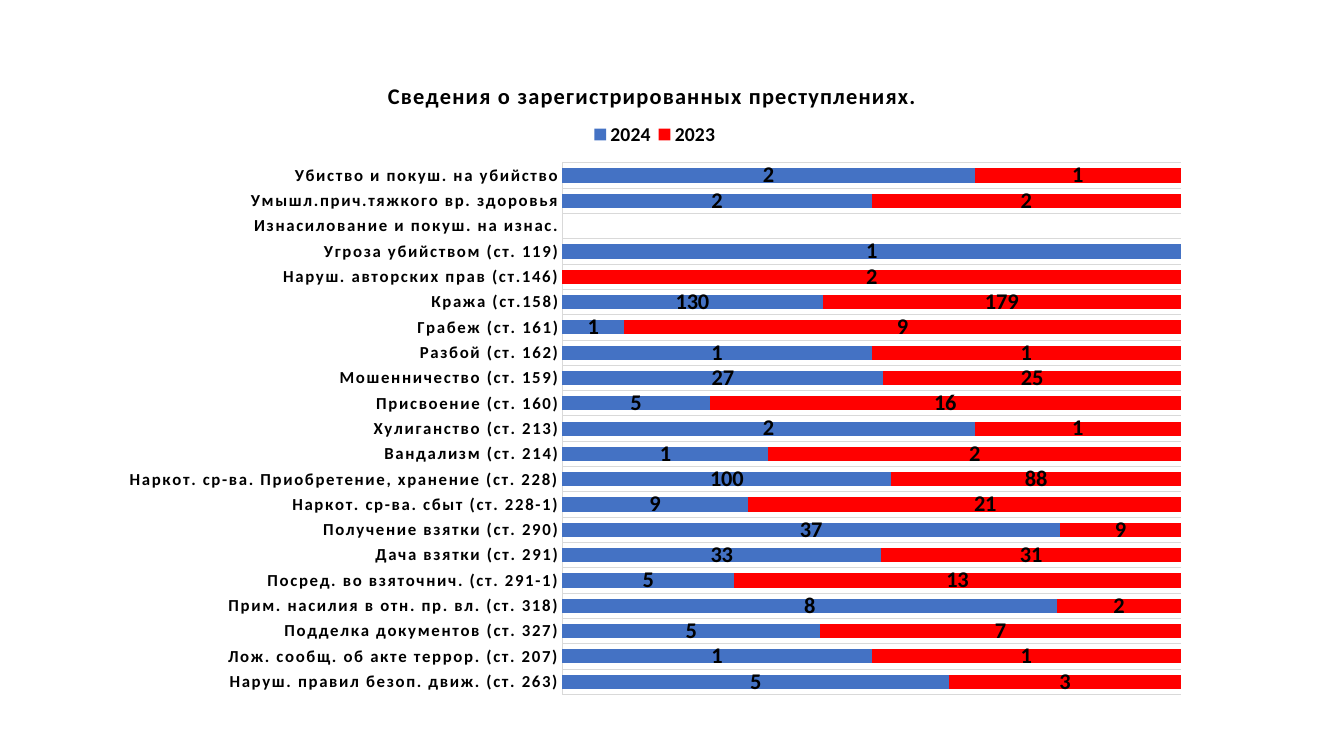
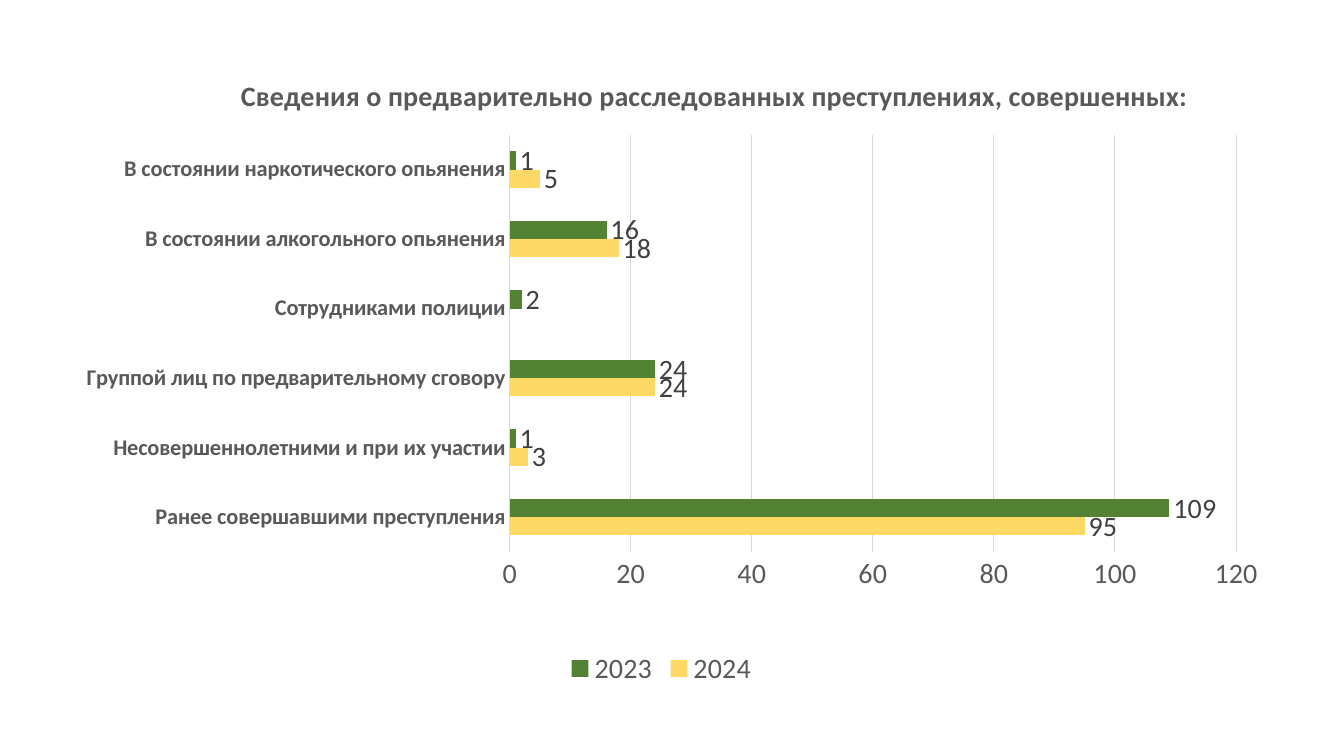
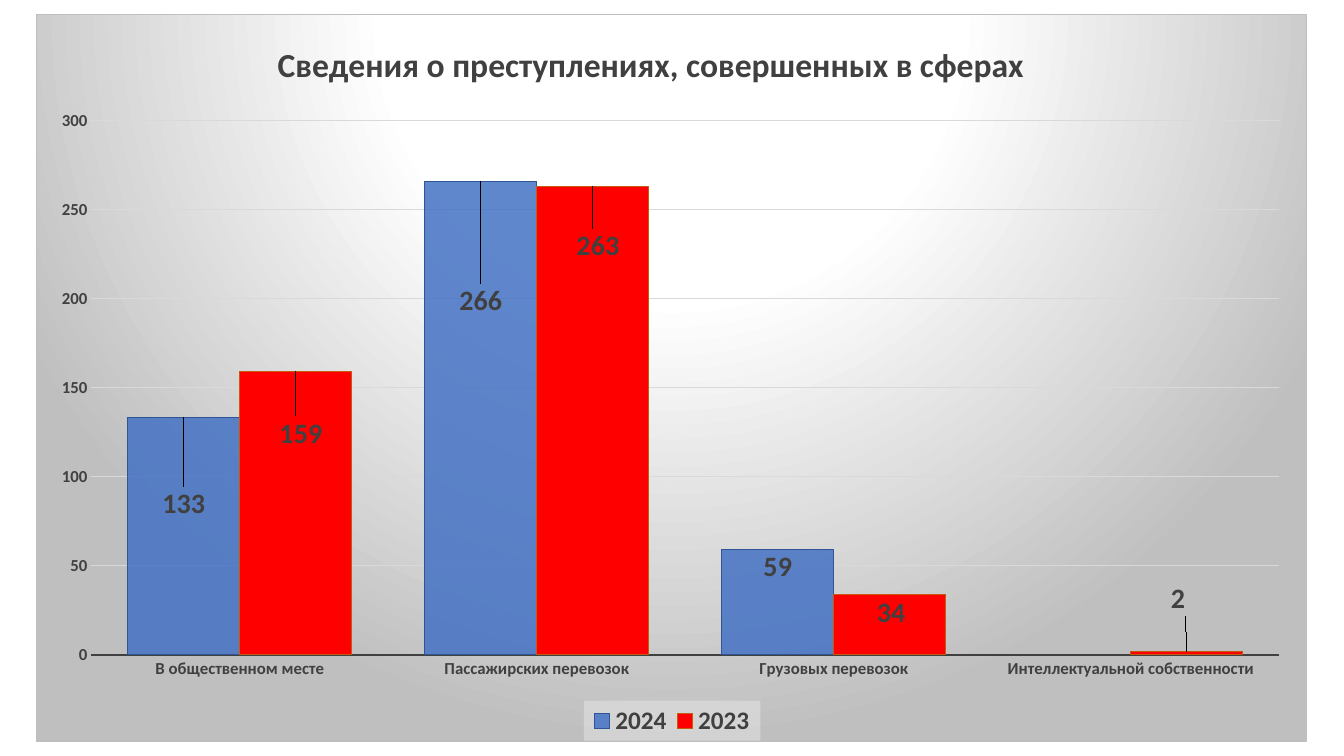
from dataclasses import dataclass, field
from typing import Optional

from lxml import etree
from pptx import Presentation
from pptx.chart.data import CategoryChartData
from pptx.dml.color import RGBColor
from pptx.enum.chart import (XL_CHART_TYPE, XL_LABEL_POSITION,
                             XL_LEGEND_POSITION, XL_TICK_MARK)
from pptx.oxml import parse_xml
from pptx.oxml.ns import nsdecls, qn
from pptx.util import Inches, Pt

STACKED = XL_CHART_TYPE.BAR_STACKED_100
BARS = XL_CHART_TYPE.BAR_CLUSTERED
COLUMNS = XL_CHART_TYPE.COLUMN_CLUSTERED
CENTER, OUTSIDE = XL_LABEL_POSITION.CENTER, XL_LABEL_POSITION.OUTSIDE_END
TOP, BOTTOM = XL_LEGEND_POSITION.TOP, XL_LEGEND_POSITION.BOTTOM
NO_TICK = XL_TICK_MARK.NONE

# Shared style
FONT = "Calibri"
BLACK, DARK, GREY, PALE = "000000", "404040", "595959", "D9D9D9"
BLUE, RED, GREEN, YELLOW = "4472C4", "FF0000", "548235", "FFD966"
SLIDE_W, SLIDE_H = Inches(13.33), Inches(7.5)

Shares = tuple[float, ...]  # percent of the enclosing slide or chart


@dataclass(frozen=True)
class TextStyle:
    size: float
    color: str
    bold: bool = True
    spacing: int = 0  # hundredths of a point


@dataclass(frozen=True)
class YearSeries:
    year: str
    values: list[Optional[int]]
    color: str
    outline: Optional[str] = None
    opacity: int = 100
    label_shifts: dict[int, Shares] = field(default_factory=dict)


@dataclass(frozen=True)
class CrimeChart:
    title: str
    kind: XL_CHART_TYPE
    box: Shares
    title_at: Shares
    plot_at: Shares
    gap: int
    categories: list[str]
    years: list[YearSeries]
    title_style: TextStyle
    category_style: TextStyle
    value_style: Optional[TextStyle]  # None hides the value axis
    label_style: TextStyle
    label_position: XL_LABEL_POSITION
    legend_style: TextStyle
    legend_position: XL_LEGEND_POSITION = BOTTOM
    legend_at: Shares = ()
    axis_color: str = PALE
    axis_width: float = 0.75
    scale: Optional[tuple[int, int]] = None  # maximum, step
    backdrop: bool = False


def rgb(color: str) -> RGBColor:
    return RGBColor.from_string(color)


def apply_style(font, style: TextStyle) -> None:
    font.name, font.size, font.bold = FONT, Pt(style.size), style.bold
    font.color.rgb = rgb(style.color)


def draw_line(line, color: str, width: float = 0.75) -> None:
    line.color.rgb = rgb(color)
    line.width = Pt(width)


def place(part, index: int, shares: Shares, edge: bool = True,
          inner: bool = False) -> None:
    """Give a chart part a manual layout, as child number index."""
    for old in part.findall(qn("c:layout")):
        part.remove(old)
    layout = etree.Element(qn("c:layout"))
    manual = etree.SubElement(layout, qn("c:manualLayout"))
    settings = [("layoutTarget", "inner")] if inner else []
    if edge:
        settings += [("xMode", "edge"), ("yMode", "edge")]
    settings += [(key, f"{share / 100:.4f}") for key, share in zip("xywh", shares)]
    for key, value in settings:
        etree.SubElement(manual, qn(f"c:{key}")).set("val", value)
    part.insert(index, layout)


def add_title(chart, design: CrimeChart) -> None:
    chart.has_title = True
    paragraph = chart.chart_title.text_frame.paragraphs[0]
    run = paragraph.add_run()
    run.text = design.title
    apply_style(run.font, design.title_style)
    run.font._element.set("spc", str(design.title_style.spacing))
    place(chart._chartSpace.xpath("c:chart/c:title")[0], 1, design.title_at)


def format_axes(chart, design: CrimeChart) -> None:
    names, values = chart.category_axis, chart.value_axis
    names.major_tick_mark = values.major_tick_mark = NO_TICK
    apply_style(names.tick_labels.font, design.category_style)
    for props in names._element.xpath("c:txPr//a:defRPr"):
        props.set("spc", str(design.category_style.spacing))
    draw_line(names.format.line, design.axis_color, design.axis_width)
    if design.value_style is None:
        values.visible = values.has_major_gridlines = False
        draw_line(names.major_gridlines.format.line, PALE)
        return
    apply_style(values.tick_labels.font, design.value_style)
    values.format.line.fill.background()
    draw_line(values.major_gridlines.format.line, PALE)
    values.minimum_scale = 0
    values.maximum_scale, values.major_unit = design.scale


def format_series(series, year: YearSeries, design: CrimeChart) -> None:
    series.invert_if_negative = False
    series.format.fill.solid()
    series.format.fill.fore_color.rgb = rgb(year.color)
    if year.opacity < 100:
        tone = series._element.xpath("c:spPr/a:solidFill/a:srgbClr")[0]
        etree.SubElement(tone, qn("a:alpha")).set("val", str(year.opacity * 1000))
    if year.outline:
        draw_line(series.format.line, year.outline)
    labels = series.data_labels
    labels.show_value = True
    labels.position = design.label_position
    apply_style(labels.font, design.label_style)
    # Labels moved away from their usual place
    for index, shift in year.label_shifts.items():
        label = series.points[index].data_label
        apply_style(label.font, design.label_style)
        label.position = design.label_position
        node = series._element.xpath(f"c:dLbls/c:dLbl[c:idx/@val='{index}']")[0]
        place(node, 1, shift, edge=False)


def add_legend(chart, design: CrimeChart) -> None:
    chart.has_legend = True
    legend = chart.legend
    legend.position = design.legend_position
    legend.include_in_layout = False
    apply_style(legend.font, design.legend_style)
    if design.legend_at:
        place(legend._element, 1, design.legend_at)


def add_backdrop(chart) -> None:
    """Circular gradient behind the chart, translucent panel behind the legend."""
    stops = "".join(
        f'<a:gs pos="{at * 1000}"><a:srgbClr val="{color}"/></a:gs>'
        for at, color in ((0, "FFFFFF"), (39, "FFFFFF"), (100, "BFBFBF")))
    area = parse_xml(
        f'<c:spPr {nsdecls("c", "a")}><a:gradFill><a:gsLst>{stops}</a:gsLst>'
        '<a:path path="circle"><a:fillToRect l="50000" t="-80000" r="50000" '
        'b="180000"/></a:path></a:gradFill><a:ln w="9525"><a:solidFill>'
        '<a:srgbClr val="BFBFBF"/></a:solidFill></a:ln></c:spPr>')
    chart._chartSpace.find(qn("c:chart")).addnext(area)
    panel = parse_xml(
        f'<c:spPr {nsdecls("c", "a")}><a:solidFill><a:srgbClr val="F2F2F2">'
        '<a:alpha val="39000"/></a:srgbClr></a:solidFill></c:spPr>')
    chart.legend._element.find(qn("c:txPr")).addprevious(panel)


def add_chart_slide(deck, design: CrimeChart) -> None:
    slide = deck.slides.add_slide(deck.slide_layouts[6])
    data = CategoryChartData()
    data.categories = design.categories
    for year in design.years:
        data.add_series(year.year, year.values)
    left, top, width, height = (
        int(share * side / 100)
        for share, side in zip(design.box, (SLIDE_W, SLIDE_H) * 2))
    chart = slide.shapes.add_chart(design.kind, left, top, width, height, data).chart
    apply_style(chart.font, TextStyle(10, BLACK, bold=False))
    add_title(chart, design)
    format_axes(chart, design)
    plot = chart.plots[0]
    plot.vary_by_categories = False
    plot.gap_width = design.gap
    plot.overlap = 100 if design.kind == STACKED else 0
    for series, year in zip(plot.series, design.years):
        format_series(series, year, design)
    place(chart._chartSpace.xpath("c:chart/c:plotArea")[0], 0,
          design.plot_at, inner=True)
    add_legend(chart, design)
    if design.backdrop:
        add_backdrop(chart)


# Content
REGISTERED = CrimeChart(
    title="Сведения о зарегистрированных преступлениях.",
    kind=STACKED,
    box=(8.03, 6.8, 81.47, 86.8),
    title_at=(25.2, 3.8),
    plot_at=(41.5, 17, 56.5, 81),
    gap=79,
    categories=[
        "Наруш. правил безоп. движ. (ст. 263)",
        "Лож. сообщ. об акте террор. (ст. 207)",
        "Подделка документов (ст. 327)",
        "Прим. насилия в отн. пр. вл. (ст. 318)",
        "Посред. во взяточнич. (ст. 291-1)",
        "Дача взятки (ст. 291)",
        "Получение взятки (ст. 290)",
        "Наркот. ср-ва. сбыт (ст. 228-1)",
        "Наркот. ср-ва. Приобретение, хранение (ст. 228)",
        "Вандализм (ст. 214)",
        "Хулиганство (ст. 213)",
        "Присвоение (ст. 160)",
        "Мошенничество (ст. 159)",
        "Разбой (ст. 162)",
        "Грабеж (ст. 161)",
        "Кража (ст.158)",
        "Наруш. авторских прав (ст.146)",
        "Угроза убийством (ст. 119)",
        "Изнасилование и покуш. на изнас.",
        "Умышл.прич.тяжкого вр. здоровья",
        "Убиство и покуш. на убийство",
    ],
    years=[
        YearSeries("2024", [5, 1, 5, 8, 5, 33, 37, 9, 100, 1, 2, 5, 27, 1, 1,
                            130, None, 1, None, 2, 2], BLUE),
        YearSeries("2023", [3, 1, 7, 2, 13, 31, 9, 21, 88, 2, 1, 16, 25, 1, 9,
                            179, 2, None, None, 2, 1], RED,
                   label_shifts={7: (1.9, 0)}),
    ],
    title_style=TextStyle(16, BLACK, spacing=100),
    category_style=TextStyle(12, BLACK, spacing=120),
    value_style=None,
    label_style=TextStyle(16, BLACK),
    label_position=CENTER,
    legend_style=TextStyle(14, BLACK),
    legend_position=TOP,
    legend_at=(43.7, 10.5, 12.5, 4.3),
)

INVESTIGATED = CrimeChart(
    title="Сведения о предварительно расследованных преступлениях, совершенных:",
    kind=BARS,
    box=(1.8, 6.93, 94.82, 84.53),
    title_at=(16.6, 2.8),
    plot_at=(38.1, 12.9, 57, 65.3),
    gap=182,
    categories=[
        "Ранее совершавшими преступления",
        "Несовершеннолетними и при их участии",
        "Группой лиц по предварительному сговору",
        "Сотрудниками полиции",
        "В состоянии алкогольного опьянения",
        "В состоянии наркотического опьянения",
    ],
    years=[
        YearSeries("2024", [95, 3, 24, None, 18, 5], YELLOW),
        YearSeries("2023", [109, 1, 24, 2, 16, 1], GREEN),
    ],
    title_style=TextStyle(20, GREY),
    category_style=TextStyle(16, GREY),
    value_style=TextStyle(20, GREY, bold=False),
    label_style=TextStyle(20, DARK, bold=False),
    label_position=OUTSIDE,
    legend_style=TextStyle(20, GREY, bold=False),
    scale=(120, 20),
)

SPHERES = CrimeChart(
    title="Сведения о преступлениях, совершенных в сферах",
    kind=COLUMNS,
    box=(2.7, 1.87, 94.52, 96.27),
    title_at=(18.5, 3),
    plot_at=(4.3, 14.6, 93.6, 73.5),
    gap=65,
    categories=[
        "В общественном месте",
        "Пассажирских перевозок",
        "Грузовых перевозок",
        "Интеллектуальной собственности",
    ],
    years=[
        YearSeries("2024", [133, 266, 59, None], BLUE, "2F5597", 85,
                   {0: (0, 14.7), 1: (0, 19.4), 2: (0, 5.2)}),
        YearSeries("2023", [159, 263, 34, 2], RED, "C55A11", 100,
                   {0: (0.4, 11.4), 1: (0.4, 11.1), 2: (0.1, 5.4), 3: (-0.7, -4.3)}),
    ],
    title_style=TextStyle(24, DARK),
    category_style=TextStyle(12, DARK),
    value_style=TextStyle(12, DARK),
    label_style=TextStyle(20, DARK),
    label_position=OUTSIDE,
    legend_style=TextStyle(18, DARK),
    legend_at=(43.1, 94.4, 13.9, 5.5),
    axis_color=DARK,
    axis_width=1.5,
    scale=(300, 50),
    backdrop=True,
)


def main() -> None:
    deck = Presentation()
    deck.slide_width, deck.slide_height = SLIDE_W, SLIDE_H
    for design in (REGISTERED, INVESTIGATED, SPHERES):
        add_chart_slide(deck, design)
    deck.save("out.pptx")


if __name__ == "__main__":
    main()
